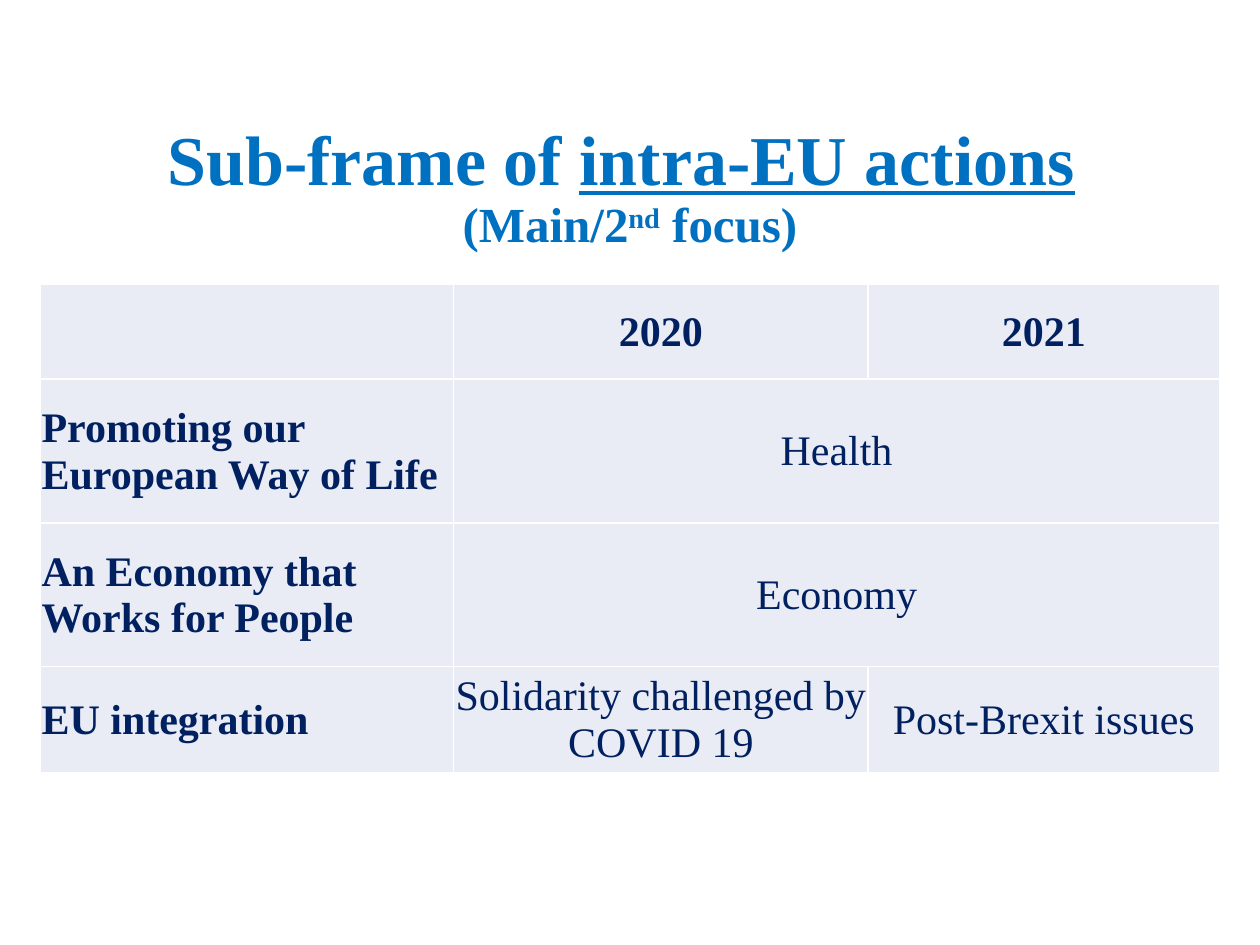
import dataclasses

import lxml.etree
import pptx
import pptx.dml.color
import pptx.enum.text
import pptx.oxml.ns
import pptx.util

ALIGN = pptx.enum.text.PP_ALIGN
MIDDLE = pptx.enum.text.MSO_ANCHOR.MIDDLE
Inches = pptx.util.Inches


@dataclasses.dataclass(frozen=True)
class Theme:
    font: str = "Times New Roman"
    title_color: str = "0070C0"
    text_color: str = "002060"
    cell_fill: str = "E9EBF5"
    border: str = "FFFFFF"
    border_width: float = 1
    title_size: float = 40
    subtitle_size: float = 28
    table_size: float = 24


THEME = Theme()
SLIDE_WIDTH, SLIDE_HEIGHT = 10, 7.5
MARGIN = 0.032 * SLIDE_WIDTH
CONTENT_WIDTH = SLIDE_WIDTH - 2 * MARGIN
COLUMNS = [3.28, 3.29, 2.79]
ROWS = [0.75, 1.14, 1.14, 0.84]
HEADINGS = ["", "2020", "2021"]
FRAMES = [
    ("Promoting our European Way of Life", ["Health"]),
    ("An Economy that Works for People", ["Economy"]),
    ("EU integration", ["Solidarity challenged by COVID 19", "Post-Brexit issues"]),
]


def add_span(para, text, size, color, bold=True, underline=False, baseline=None):
    span = para.add_run()
    span.text = text
    font = span.font
    font.name = THEME.font
    font.size = pptx.util.Pt(size)
    font.bold = bold
    font.underline = underline
    font.color.rgb = pptx.dml.color.RGBColor.from_string(color)
    if baseline:
        span._r.get_or_add_rPr().set("baseline", str(baseline * 1000))


def add_title(page):
    box = page.shapes.add_textbox(
        Inches(MARGIN), Inches(0.115 * SLIDE_HEIGHT),
        Inches(CONTENT_WIDTH), Inches(0.17 * SLIDE_HEIGHT))
    frame = box.text_frame
    frame.word_wrap = True
    frame.vertical_anchor = MIDDLE
    para = frame.paragraphs[0]
    para.alignment = ALIGN.CENTER
    para.line_spacing = 0.9
    large = (THEME.title_size, THEME.title_color)
    small = (THEME.subtitle_size, THEME.title_color)
    add_span(para, "Sub-frame of ", *large)
    add_span(para, "intra-EU actions", *large, underline=True)
    add_span(para, " ", *large)
    para.add_line_break()
    add_span(para, "(Main/2", *small)
    add_span(para, "nd", *small, baseline=30)
    add_span(para, " focus)", *small)


def style_cell(cell):
    cell.fill.solid()
    cell.fill.fore_color.rgb = pptx.dml.color.RGBColor.from_string(THEME.cell_fill)
    cell.vertical_anchor = MIDDLE
    cell.margin_left = cell.margin_right = cell.margin_top = Inches(0.01)
    cell.margin_bottom = 0
    qn = pptx.oxml.ns.qn
    properties = cell._tc.get_or_add_tcPr()
    for index, side in enumerate(("a:lnL", "a:lnR", "a:lnT", "a:lnB")):
        line = lxml.etree.Element(qn(side), w=str(pptx.util.Pt(THEME.border_width)))
        fill = lxml.etree.SubElement(line, qn("a:solidFill"))
        lxml.etree.SubElement(fill, qn("a:srgbClr"), val=THEME.border)
        properties.insert(index, line)


def write_cell(cell, text, bold, align):
    if text:
        para = cell.text_frame.paragraphs[0]
        para.alignment = align
        add_span(para, text, THEME.table_size, THEME.text_color, bold)


def add_frame_table(page):
    table = page.shapes.add_table(
        len(ROWS), len(COLUMNS), Inches(MARGIN), Inches(2.26),
        Inches(sum(COLUMNS)), Inches(sum(ROWS))).table
    for column, width in zip(table.columns, COLUMNS):
        column.width = Inches(width)
    for row, height in zip(table.rows, ROWS):
        row.height = Inches(height)
    for cell in table.iter_cells():
        style_cell(cell)
    for column, heading in enumerate(HEADINGS):
        write_cell(table.cell(0, column), heading, True, ALIGN.CENTER)
    for row, (label, topics) in enumerate(FRAMES, start=1):
        write_cell(table.cell(row, 0), label, True, ALIGN.LEFT)
        if len(topics) == 1:
            table.cell(row, 1).merge(table.cell(row, 2))
        for column, topic in enumerate(topics, start=1):
            write_cell(table.cell(row, column), topic, False, ALIGN.CENTER)


def main():
    deck = pptx.Presentation()
    deck.slide_width = Inches(SLIDE_WIDTH)
    deck.slide_height = Inches(SLIDE_HEIGHT)
    page = deck.slides.add_slide(deck.slide_layouts[6])
    add_title(page)
    add_frame_table(page)
    deck.save("out.pptx")


if __name__ == "__main__":
    main()
